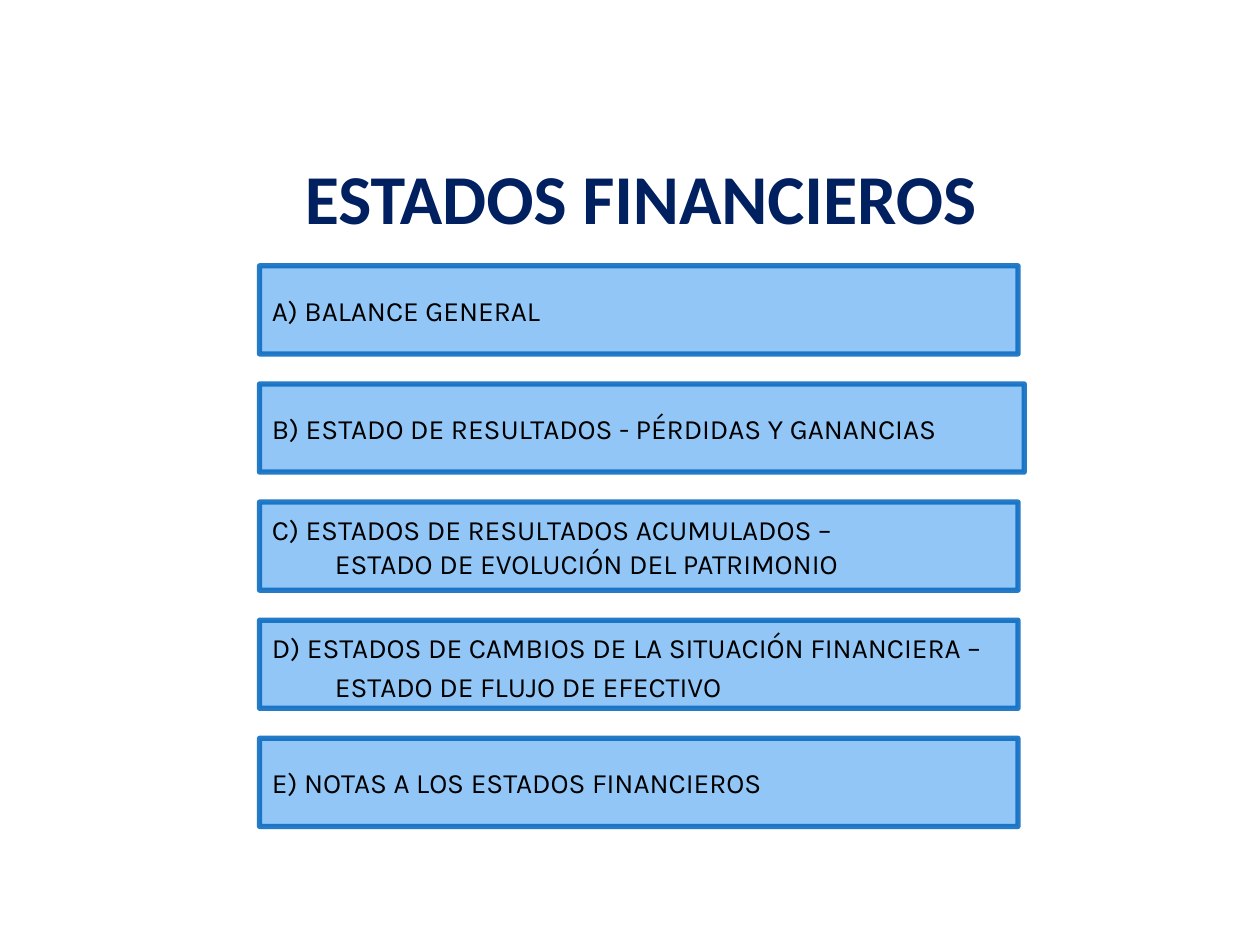
from pptx import Presentation
from pptx.dml.color import RGBColor
from pptx.enum.shapes import MSO_SHAPE as Shape
from pptx.enum.text import MSO_ANCHOR as Anchor, PP_ALIGN as Align
from pptx.oxml.ns import qn
from pptx.util import Inches, Pt
from lxml.etree import SubElement

# Lines of text, box width, space between lines in points
ITEMS = [
    (["A) BALANCE GENERAL"], 6.02, 0),
    (["B) ESTADO DE RESULTADOS - PÉRDIDAS Y GANANCIAS"], 6.07, 0),
    (["C) ESTADOS DE RESULTADOS ACUMULADOS –",
      "\tESTADO DE EVOLUCIÓN DEL PATRIMONIO"], 6.02, 0),
    (["D) ESTADOS DE CAMBIOS DE LA SITUACIÓN FINANCIERA –",
      "\tESTADO DE FLUJO DE EFECTIVO"], 6.02, 3.2),
    (["E) NOTAS A LOS ESTADOS FINANCIEROS"], 6.02, 0),
]
TOP, LAST = 2.11, 5.86
STEP = (LAST - TOP) / (len(ITEMS) - 1)


def color(code):
    return RGBColor.from_string(code)


def style(par, name, size, code, bold=False):
    font = par.font
    font.name, font.size, font.bold = name, Pt(size), bold
    font.color.rgb = color(code)


def add_title(slide, text):
    box = slide.shapes.add_textbox(Inches(1.88), Inches(1.18),
                                   Inches(6.41), Inches(0.77))
    box.text_frame.word_wrap = True
    par = box.text_frame.paragraphs[0]
    par.text = text
    par.alignment = Align.CENTER
    style(par, "Calibri", 40, "002060", bold=True)


def add_item(slide, top, lines, width, gap):
    box = slide.shapes.add_shape(Shape.RECTANGLE, Inches(2.06), Inches(top),
                                 Inches(width), Inches(0.7))
    box.shadow.inherit = False
    box.fill.solid()
    box.fill.fore_color.rgb = color("91C6F7")

    # Slightly transparent border
    box.line.color.rgb = color("0F6DC2")
    box.line.width = Pt(3)
    tint = box.line._ln.find(".//" + qn("a:srgbClr"))
    SubElement(tint, qn("a:alpha"), val="90000")

    frame = box.text_frame
    frame.word_wrap = True
    frame.vertical_anchor = Anchor.MIDDLE
    frame.margin_top = Inches(0.05) + Pt(gap)
    for i, line in enumerate(lines):
        par = frame.add_paragraph() if i else frame.paragraphs[0]
        par.text = line
        par.alignment = Align.LEFT
        if i and gap:
            par.space_before = Pt(gap)
        style(par, "Karla", 16, "000000")


def main():
    deck = Presentation()
    deck.slide_width, deck.slide_height = Inches(10), Inches(7.5)
    slide = deck.slides.add_slide(deck.slide_layouts[6])
    add_title(slide, "ESTADOS FINANCIEROS")
    for row, (lines, width, gap) in enumerate(ITEMS):
        add_item(slide, TOP + row * STEP, lines, width, gap)
    deck.save("out.pptx")


if __name__ == "__main__":
    main()
